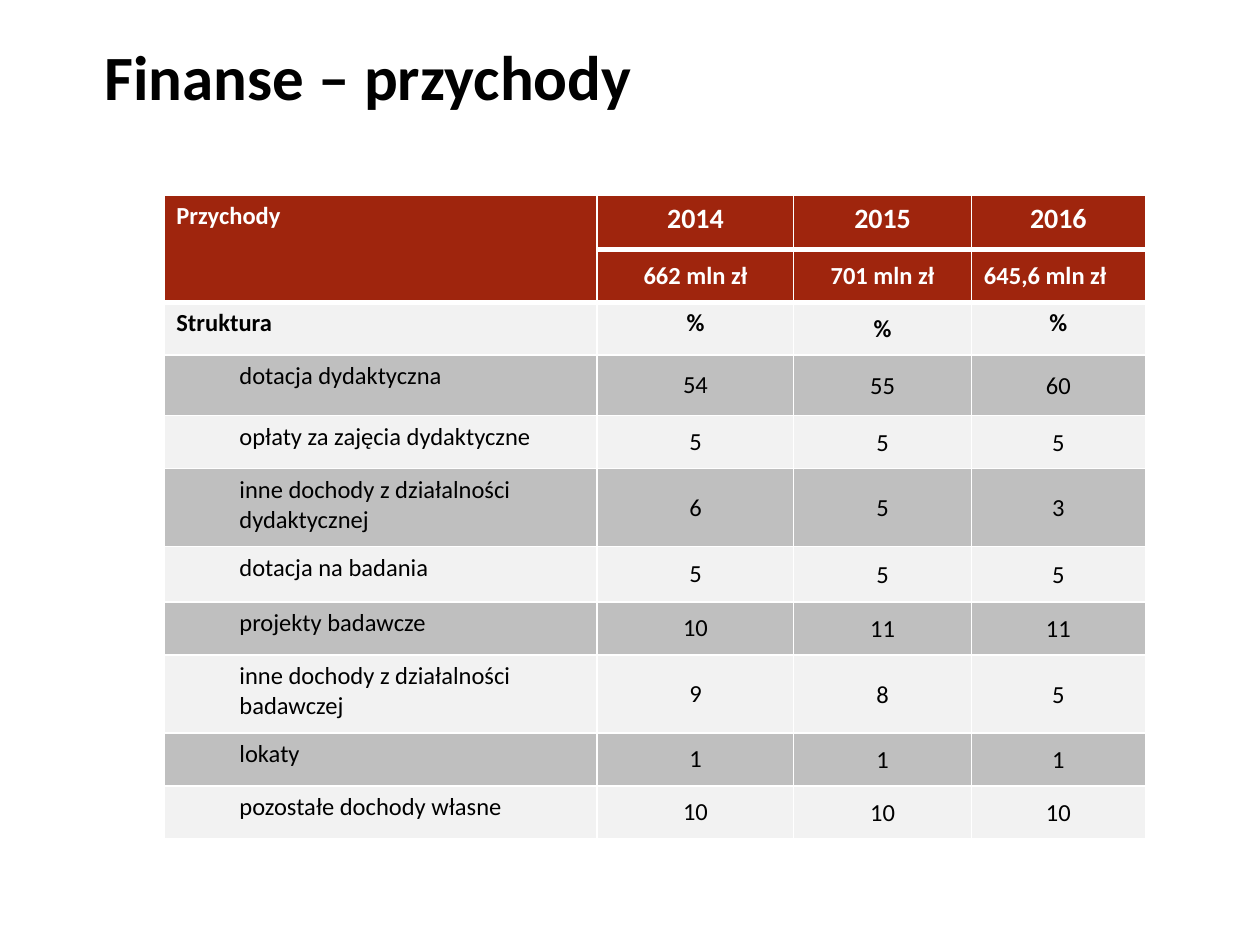
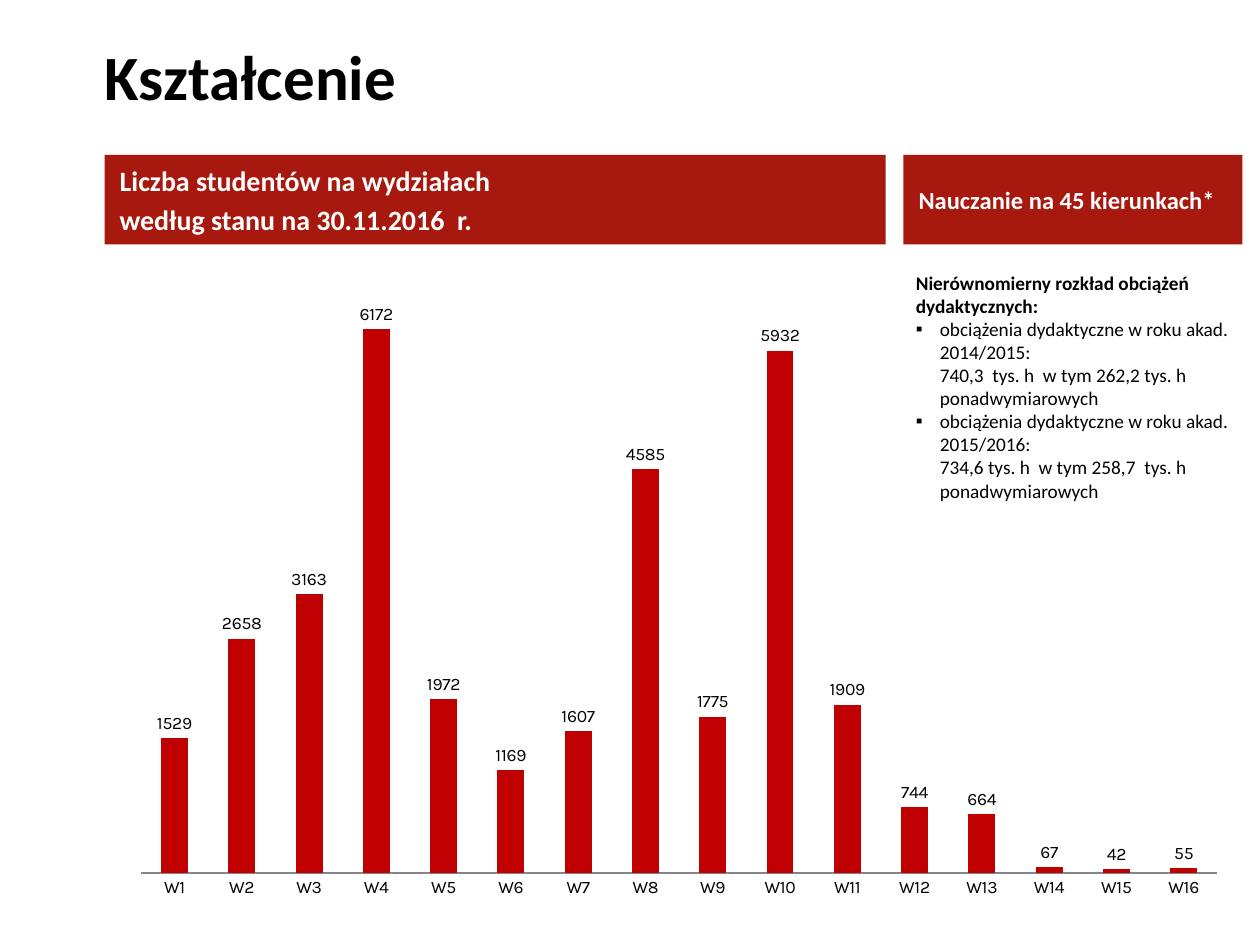
from pptx import Presentation
from pptx.chart.data import CategoryChartData
from pptx.dml.color import RGBColor
from pptx.enum.chart import XL_CHART_TYPE as Chart, XL_LABEL_POSITION as LabelPos, XL_TICK_MARK as Tick
from pptx.enum.shapes import MSO_SHAPE as Shape
from pptx.enum.text import MSO_ANCHOR as Anchor, MSO_AUTO_SIZE as AutoSize, PP_ALIGN as Align
from pptx.oxml import parse_xml
from pptx.oxml.ns import nsdecls, qn
from pptx.util import Inches, Pt

BLACK = RGBColor(0x00, 0x00, 0x00)
WHITE = RGBColor(0xFF, 0xFF, 0xFF)
BAND_RED = RGBColor(0xA7, 0x19, 0x0E)
HEAD_RED = RGBColor(0x9F, 0x25, 0x0D)
BAR_RED = RGBColor(0xC0, 0x00, 0x00)
LIGHT = RGBColor(0xF2, 0xF2, 0xF2)
GREY = RGBColor(0xBF, 0xBF, 0xBF)
AXIS = RGBColor(0x86, 0x86, 0x86)

COLUMNS, ROWS = 100, 75
LEFT = 8.3
RIGHT = 71.7

REVENUE = [
    ("Przychody", "2014", "2015", "2016"),
    ("", "662 mln zł", "701 mln zł", "645,6 mln zł"),
    ("Struktura", "%", "%", "%"),
    ("dotacja dydaktyczna", 54, 55, 60),
    ("opłaty za zajęcia dydaktyczne", 5, 5, 5),
    ("inne dochody z działalności dydaktycznej", 6, 5, 3),
    ("dotacja na badania", 5, 5, 5),
    ("projekty badawcze", 10, 11, 11),
    ("inne dochody z działalności badawczej", 9, 8, 5),
    ("lokaty", 1, 1, 1),
    ("pozostałe dochody własne", 10, 10, 10),
]
REVENUE_COLS = [34.4, 15.6, 14.1, 13.8]
REVENUE_ROWS = [4.3, 4.2, 4.2, 4.8, 4.2, 6.2, 4.4, 4.2, 6.2, 4.2, 4.2]

STUDENTS = [1529, 2658, 3163, 6172, 1972, 1169, 1607, 4585,
            1775, 5932, 1909, 744, 664, 67, 42, 55]

WORKLOAD = [
    "Nierównomierny rozkład obciążeń dydaktycznych:",
    "obciążenia dydaktyczne w roku akad. 2014/2015:\n"
    "740,3  tys. h  w tym 262,2 tys. h ponadwymiarowych",
    "obciążenia dydaktyczne w roku akad. 2015/2016:\n"
    "734,6 tys. h  w tym 258,7  tys. h ponadwymiarowych",
]


class Deck:
    font = "Calibri"
    chart_font = "Karla"

    def __init__(self):
        self.prs = Presentation()
        self.prs.slide_width, self.prs.slide_height = Inches(10), Inches(7.5)
        self.s = None

    def x(self, columns):
        return round(self.prs.slide_width * columns / COLUMNS)

    def y(self, rows):
        return round(self.prs.slide_height * rows / ROWS)

    def box(self, left, top, width, height):
        return self.x(left), self.y(top), self.x(width), self.y(height)

    def style(self, p, size, color=BLACK, bold=False):
        for r in p.runs:
            r.font.name, r.font.size = self.font, Pt(size)
            r.font.color.rgb, r.font.bold = color, bold

    def indent(self, p, margin, bullet=None):
        pPr = p._p.get_or_add_pPr()
        pPr.set("marL", str(Inches(margin)))
        pPr.set("indent", str(-Inches(margin) if bullet else 0))
        if bullet:
            pPr.append(parse_xml(f'<a:buFont {nsdecls("a")} typeface="Arial"/>'))
            pPr.append(parse_xml(f'<a:buChar {nsdecls("a")} char="{bullet}"/>'))

    def slide(self, title):
        self.s = self.prs.slides.add_slide(self.prs.slide_layouts[6])
        tf = self.s.shapes.add_textbox(*self.box(LEFT, 1.3, 90.4, 9.4)).text_frame
        tf.word_wrap, tf.vertical_anchor, tf.margin_left = True, Anchor.MIDDLE, 0
        tf.text = title
        self.style(tf.paragraphs[0], 36, bold=True)

    def band(self, left, width, text, size):
        sp = self.s.shapes.add_shape(Shape.RECTANGLE, *self.box(left, 12.3, width, 7.1))
        sp.shadow.inherit = False
        sp.fill.solid()
        sp.fill.fore_color.rgb = BAND_RED
        sp.line.fill.background()
        tf = sp.text_frame
        tf.word_wrap, tf.vertical_anchor = True, Anchor.MIDDLE
        tf.margin_left = tf.margin_right = Inches(0.12)
        tf.text = text
        for i, p in enumerate(tf.paragraphs):
            p.alignment = Align.LEFT
            if i:
                p.space_before = Pt(size * 0.2)
            self.style(p, size, WHITE, True)

    def bullet_list(self, left, top, width, height, heading, *items):
        tf = self.s.shapes.add_textbox(*self.box(left, top, width, height)).text_frame
        tf.word_wrap, tf.auto_size = True, AutoSize.SHAPE_TO_FIT_TEXT
        tf.text = heading
        self.style(tf.paragraphs[0], 11, bold=True)
        for item in items:
            p = tf.add_paragraph()
            p.text = item
            self.indent(p, 0.19, "▪")
            self.style(p, 11)

    def borders(self, cell, **widths):
        tcPr = cell._tc.get_or_add_tcPr()
        for i, side in enumerate("LRTB"):
            width = Pt(widths.get(side, 1))
            tcPr.insert(i, parse_xml(
                f'<a:ln{side} {nsdecls("a")} w="{width}"><a:solidFill>'
                f'<a:srgbClr val="{WHITE}"/></a:solidFill></a:ln{side}>'))

    def revenue_cell(self, cell, row, col, value):
        head = row < 2
        cell.fill.solid()
        cell.fill.fore_color.rgb = HEAD_RED if head else GREY if row % 2 else LIGHT
        self.borders(cell, T=3 if row in (1, 2) else 1, B=3 if head else 1)
        cell.text = str(value)
        p = cell.text_frame.paragraphs[0]
        if col:
            p.alignment = Align.JUSTIFY if (row, col) == (1, 3) else Align.CENTER
            if row and (row != 2 or col == 2):
                cell.vertical_anchor = Anchor.MIDDLE
            if (row and col == 2) or (row > 2 and col == 3):
                cell.margin_left = cell.margin_right = cell.margin_top = Inches(0.01)
                cell.margin_bottom = 0
        elif row > 2:
            self.indent(p, 0.5)
        size = 16 if row == 0 and col else 14
        self.style(p, size, WHITE if head else BLACK, row < 3)

    def revenue_table(self, left, top):
        place = self.box(left, top, sum(REVENUE_COLS), sum(REVENUE_ROWS))
        table = self.s.shapes.add_table(len(REVENUE), len(REVENUE_COLS), *place).table
        table.first_row = table.horz_banding = False
        for column, width in zip(table.columns, REVENUE_COLS):
            column.width = self.x(width)
        for row, height in zip(table.rows, REVENUE_ROWS):
            row.height = self.y(height)
        for i, values in enumerate(REVENUE):
            for j, value in enumerate(values):
                self.revenue_cell(table.cell(i, j), i, j, value)
        table.cell(0, 0).merge(table.cell(1, 0))

    def column_chart(self, left, top, width, height, values):
        data = CategoryChartData()
        data.categories = [f"W{i}" for i in range(1, len(values) + 1)]
        data.add_series("Series 1", values)
        chart = self.s.shapes.add_chart(
            Chart.COLUMN_CLUSTERED, *self.box(left, top, width, height), data).chart
        chart.has_legend = chart.has_title = False
        chart.font.name, chart.font.size = self.chart_font, Pt(10)
        chart.font.color.rgb = BLACK
        chart.element.find(qn("c:chart")).addnext(parse_xml(
            f'<c:spPr {nsdecls("c", "a")}><a:noFill/><a:ln><a:noFill/></a:ln></c:spPr>'))
        axis = chart.value_axis
        axis.visible = axis.has_major_gridlines = False
        axis.minimum_scale, axis.maximum_scale = 0, 7000
        chart.category_axis.major_tick_mark = Tick.NONE
        chart.category_axis.format.line.color.rgb = AXIS
        plot = chart.plots[0]
        plot.gap_width, plot.vary_by_categories = 150, False
        plot.has_data_labels = True
        plot.data_labels.show_value = True
        plot.data_labels.position = LabelPos.OUTSIDE_END
        fill = plot.series[0].format.fill
        fill.solid()
        fill.fore_color.rgb = BAR_RED


def main():
    deck = Deck()
    deck.slide("Finanse – przychody")
    deck.revenue_table(13, 15.5)

    deck.slide("Kształcenie")
    deck.band(LEFT, 62, "Liczba studentów na wydziałach\nwedług stanu na 30.11.2016  r.", 16)
    deck.band(RIGHT, 26.9, "Nauczanie na 45 kierunkach*", 14)
    deck.bullet_list(RIGHT, 21, 27.2, 19.5, *WORKLOAD)
    deck.column_chart(9.4, 19.3, 89, 53, STUDENTS)
    deck.prs.save("out.pptx")


if __name__ == "__main__":
    main()
